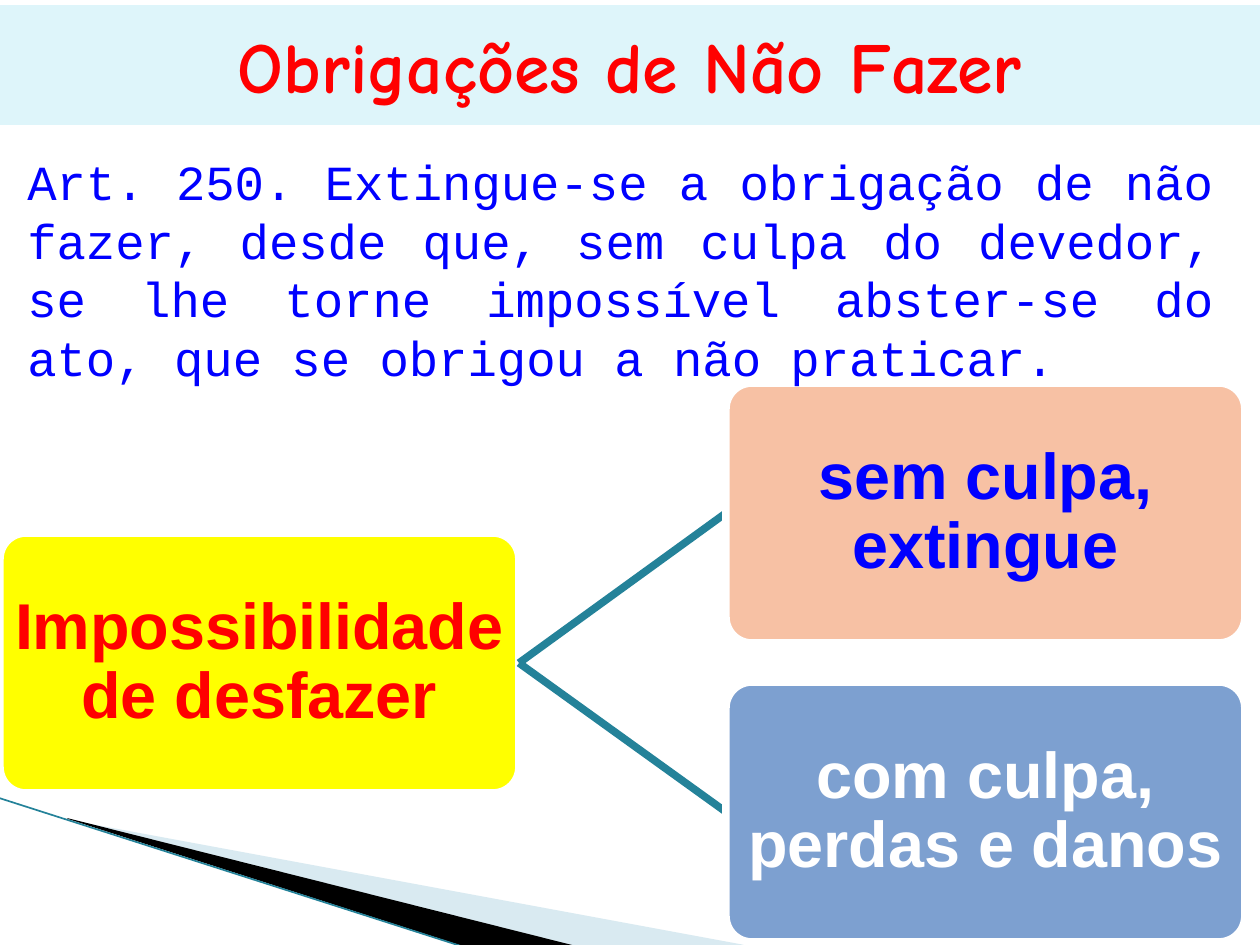
from lxml import etree
from pptx import Presentation
from pptx import util as u
from pptx.dml.color import RGBColor
from pptx.enum import shapes, text
from pptx.oxml.ns import qn

PX = 914400 / 126
COLORS = {
    "band": "DEF5FA", "red": "FF0000", "blue": "0000FF", "white": "FFFFFF",
    "yellow": "FFFF00", "peach": "F7C1A4", "steel": "7DA0D0",
    "teal": "248299", "mist": "A0CBDC", "black": "000000",
}
BOX_WIDTH, BOX_HEIGHT = 519, 260


def px(*lengths):
    return [u.Emu(round(length * PX)) for length in lengths]


def color(name):
    return RGBColor.from_string(COLORS[name])


class SlideBuilder:
    def __init__(self, slide):
        self.slide = slide

    def fill(self, shape, name, alpha=None):
        shape.fill.solid()
        shape.fill.fore_color.rgb = color(name)
        if alpha is not None:
            rgb = shape._element.spPr.find(qn("a:solidFill"))[0]
            etree.SubElement(rgb, qn("a:alpha"), val=str(alpha * 1000))

    def set_text(self, shape, words, font, paragraph_format, frame_format):
        frame = shape.text_frame
        frame.text = words
        paragraph = frame.paragraphs[0]
        font = dict(font)
        paragraph.font.color.rgb = color(font.pop("color"))
        for target, values in (
            (frame, {"word_wrap": True, **frame_format}),
            (paragraph, paragraph_format),
            (paragraph.font, font),
        ):
            for name, value in values.items():
                setattr(target, name, value)

    def title(self, words, *place):
        title = self.slide.shapes.title
        title.left, title.top, title.width, title.height = px(*place)
        self.fill(title, "band")
        self.set_text(
            title, words,
            {"name": "Comic Neue", "size": u.Pt(41), "bold": True, "color": "red"},
            {"alignment": text.PP_ALIGN.CENTER},
            {"vertical_anchor": text.MSO_ANCHOR.MIDDLE,
             "auto_size": text.MSO_AUTO_SIZE.NONE},
        )

    def article(self, words, *place):
        self.set_text(
            self.slide.shapes.add_textbox(*px(*place)), words,
            {"name": "Courier New", "size": u.Pt(28), "color": "blue"},
            {"alignment": text.PP_ALIGN.JUSTIFY},
            {"auto_size": text.MSO_AUTO_SIZE.SHAPE_TO_FIT_TEXT},
        )

    def box(self, words, left, top, fill, font_color):
        box = self.slide.shapes.add_shape(
            shapes.MSO_SHAPE.ROUNDED_RECTANGLE, *px(left, top, BOX_WIDTH, BOX_HEIGHT))
        box.adjustments[0] = 0.1
        box.shadow.inherit = False
        self.fill(box, fill)
        box.line.color.rgb = color("white")
        box.line.width = u.Pt(4.33)
        inset = px(4)[0]
        self.set_text(
            box, words,
            {"name": "Arial", "size": u.Pt(37), "bold": True, "color": font_color},
            {"alignment": text.PP_ALIGN.CENTER, "line_spacing": 0.9},
            {"vertical_anchor": text.MSO_ANCHOR.MIDDLE,
             **{f"margin_{side}": inset for side in ("left", "top", "right", "bottom")}},
        )
        return box

    def line(self, start, end, width):
        line = self.slide.shapes.add_connector(
            shapes.MSO_CONNECTOR.STRAIGHT, *px(*start, *end))
        line.line.color.rgb = color("teal")
        line.line.width = u.Pt(width)
        etree.SubElement(line._element.spPr, qn("a:effectLst"))
        return line

    def branch(self, root, *child):
        """Add a child box, with its link to the root lying behind it."""
        link = self.line((0, 0), (1, 1), 4.33)
        link.begin_connect(root, 3)
        link.end_connect(self.box(*child), 1)

    def wedge(self, points, fill, alpha=None):
        builder = self.slide.shapes.build_freeform(*points[0], scale=PX)
        builder.add_line_segments(points[1:], close=True)
        wedge = builder.convert_to_shape()
        wedge.shadow.inherit = False
        wedge.line.fill.background()
        self.fill(wedge, fill, alpha)


def main():
    presentation = Presentation()
    presentation.slide_width, presentation.slide_height = px(1260, 945)
    builder = SlideBuilder(presentation.slides.add_slide(presentation.slide_layouts[5]))

    builder.wedge([(69, 820), (750, 946), (575, 946), (69, 819)], "mist", 40)
    builder.wedge([(67, 818), (576, 946), (469, 948), (68, 819)], "black")
    builder.line((-1, 798), (467, 948), 0.95)

    builder.title("Obrigações de Não Fazer", 0, 5, 1260, 120)
    root = builder.box("Impossibilidade de desfazer", 0, 533, "yellow", "red")
    builder.branch(root, "sem culpa, extingue", 726, 383, "peach", "blue")
    builder.branch(root, "com culpa, perdas e danos", 726, 682, "steel", "white")
    builder.article(
        "Art. 250. Extingue-se a obrigação de não fazer, desde que, sem culpa do "
        "devedor, se lhe torne impossível abster-se do ato, que se obrigou a não "
        "praticar.", 15, 145, 1211, 310)

    presentation.save("out.pptx")


if __name__ == "__main__":
    main()
